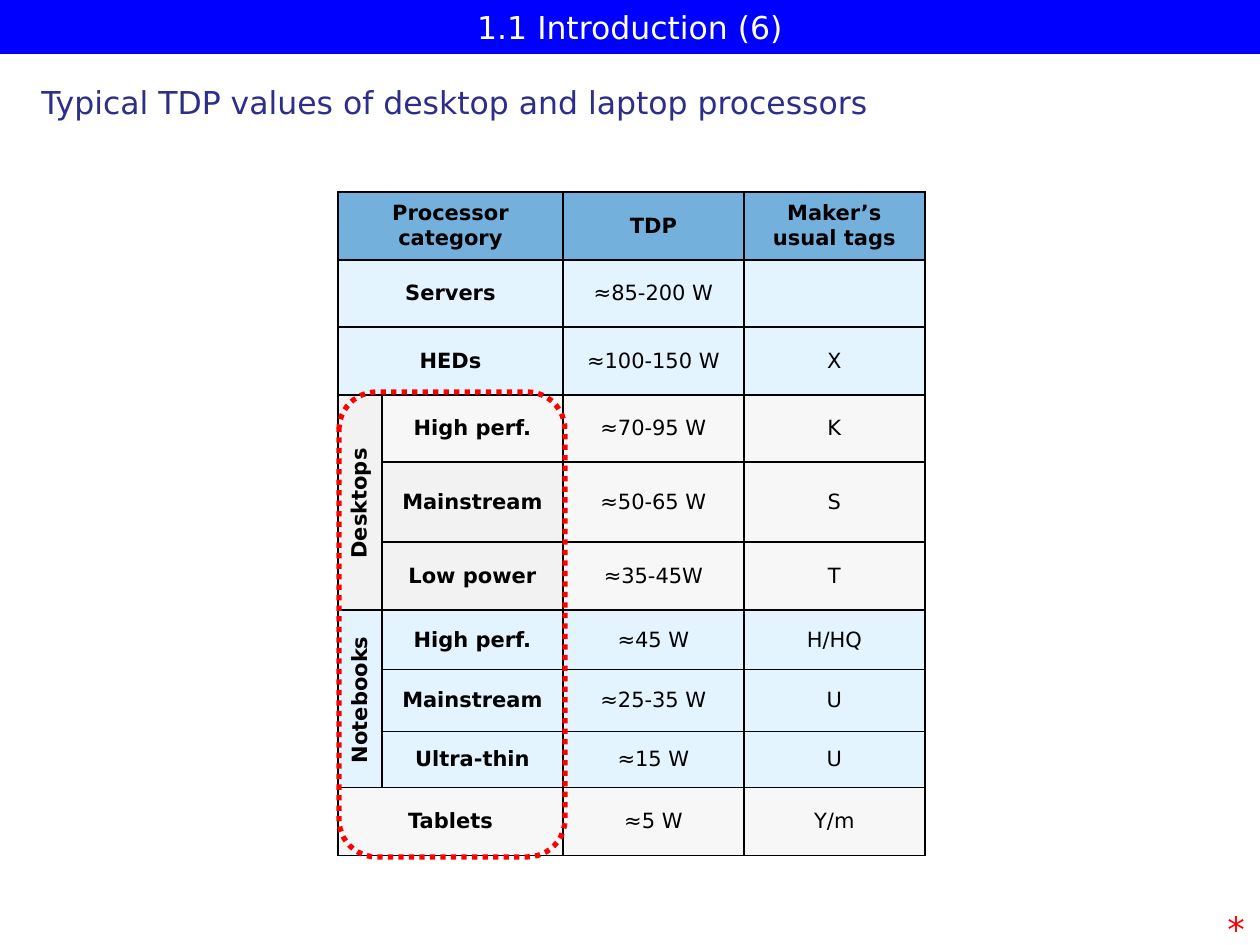
from lxml import etree
from pptx import Presentation, util as u
from pptx.dml.color import RGBColor
from pptx.enum import dml, shapes, text
from pptx.oxml import ns

PX = 914400 // 126
FONT = "DejaVu Sans"
HEAD, BLUE, GREY = "0070C0", "CCECFF", "F2F2F2"

# Content: row height, fill, category, TDP, tag
ROWS = [
    (68, HEAD, "Processor\ncategory", "TDP", "Maker’s\nusual tags"),
    (67, BLUE, "Servers", "≈85-200 W", ""),
    (68, BLUE, "HEDs", "≈100-150 W", "X"),
    (67, GREY, "High perf.", "≈70-95 W", "K"),
    (80, GREY, "Mainstream", "≈50-65 W", "S"),
    (68, GREY, "Low power", "≈35-45W", "T"),
    (60, BLUE, "High perf.", "≈45 W", "H/HQ"),
    (62, BLUE, "Mainstream", "≈25-35 W", "U"),
    (56, BLUE, "Ultra-thin", "≈15 W", "U"),
    (68, GREY, "Tablets", "≈5 W", "Y/m"),
]
COLS = [44, 181, 181, 181]
GROUPS = [(3, 5), (6, 8)]  # first and last row of desktops, notebooks
OPAQUE = {(3, 0), (4, 0), (5, 0), (4, 1), (5, 1)}
# Text, box, size, colour, bold, rotation
LABELS = [
    ("Typical TDP values of desktop and laptop processors",
     (29, 77, 1200, 50), 18, "2D2D8A", False, 0),
    ("*", (1215, 901, 48, 55), 20, "FF0000", False, 0),
    ("Notebooks", (247, 645, 198, 63), 12, "000000", True, 270),
    ("Desktops", (290, 484, 136, 38), 12, "000000", True, 270),
]


def rgb(value):
    return RGBColor.from_string(value)


def emu(box):
    return [v * PX for v in box]


def write(tf, words, size, color, bold=False, align=None):
    for i, line in enumerate(words.split("\n")):
        p = tf.paragraphs[0] if i == 0 else tf.add_paragraph()
        p.alignment = align
        r = p.add_run()
        r.text = line
        r.font.name, r.font.size, r.font.bold = FONT, u.Pt(size), bold
        r.font.color.rgb = rgb(color)


def style_cell(cell, color, opaque):
    tc_pr = cell._tc.get_or_add_tcPr()
    for side in ("a:lnL", "a:lnR", "a:lnT", "a:lnB"):
        ln = etree.SubElement(tc_pr, ns.qn(side), w=str(u.Pt(1)))
        fill = etree.SubElement(ln, ns.qn("a:solidFill"))
        etree.SubElement(fill, ns.qn("a:srgbClr"), val="000000")
    cell.fill.solid()
    cell.fill.fore_color.rgb = rgb(color)
    if not opaque:
        clr = tc_pr.find(ns.qn("a:solidFill")).find(ns.qn("a:srgbClr"))
        etree.SubElement(clr, ns.qn("a:alpha"), val="55000")
    cell.vertical_anchor = text.MSO_ANCHOR.MIDDLE


def add_tdp_table(s):
    box = (338, 192, sum(COLS), sum(row[0] for row in ROWS))
    frame = s.shapes.add_table(len(ROWS), len(COLS), *emu(box))
    table = frame.table
    for col, width in zip(table.columns, COLS):
        col.width = width * PX
    grouped = {r for first, last in GROUPS for r in range(first, last + 1)}
    for i, (height, color, category, tdp, tag) in enumerate(ROWS):
        table.rows[i].height = height * PX
        for j in range(len(COLS)):
            style_cell(table.cell(i, j), color, (i, j) in OPAQUE)
        first = 1 if i in grouped else 0
        if not first:
            table.cell(i, 0).merge(table.cell(i, 1))
        for j, words in ((first, category), (2, tdp), (3, tag)):
            if words:
                write(table.cell(i, j).text_frame, words, 12, "000000",
                      i == 0 or j == first, text.PP_ALIGN.CENTER)
    for first, last in GROUPS:
        table.cell(first, 0).merge(table.cell(last, 0))


def main():
    prs = Presentation()
    prs.slide_width, prs.slide_height = u.Inches(10), u.Inches(7.5)
    s = prs.slides.add_slide(prs.slide_layouts[6])

    # Title bar
    sp = s.shapes.add_shape(shapes.MSO_SHAPE.RECTANGLE, *emu((0, 0, 1260, 54)))
    sp.shadow.inherit = False
    sp.fill.solid()
    sp.fill.fore_color.rgb = rgb("0000FF")
    sp.line.fill.background()
    sp.text_frame.vertical_anchor = text.MSO_ANCHOR.MIDDLE
    write(sp.text_frame, "1.1 Introduction (6)", 18, "FFFFFF",
          align=text.PP_ALIGN.CENTER)

    add_tdp_table(s)

    # Heading, footnote mark and upright group names
    for words, box, size, color, bold, rotation in LABELS:
        sp = s.shapes.add_textbox(*emu(box))
        sp.rotation = rotation
        tf = sp.text_frame
        tf.word_wrap = True
        if rotation:
            tf.vertical_anchor = text.MSO_ANCHOR.BOTTOM
        write(tf, words, size, color, bold)

    # Dotted outline round the client categories
    sp = s.shapes.add_shape(shapes.MSO_SHAPE.ROUNDED_RECTANGLE,
                            *emu((339, 392, 226, 465)))
    sp.shadow.inherit = False
    sp.fill.background()
    sp.line.color.rgb = rgb("FF0000")
    sp.line.width = u.Pt(3)
    sp.line.dash_style = dml.MSO_LINE.ROUND_DOT

    prs.save("out.pptx")


if __name__ == "__main__":
    main()
